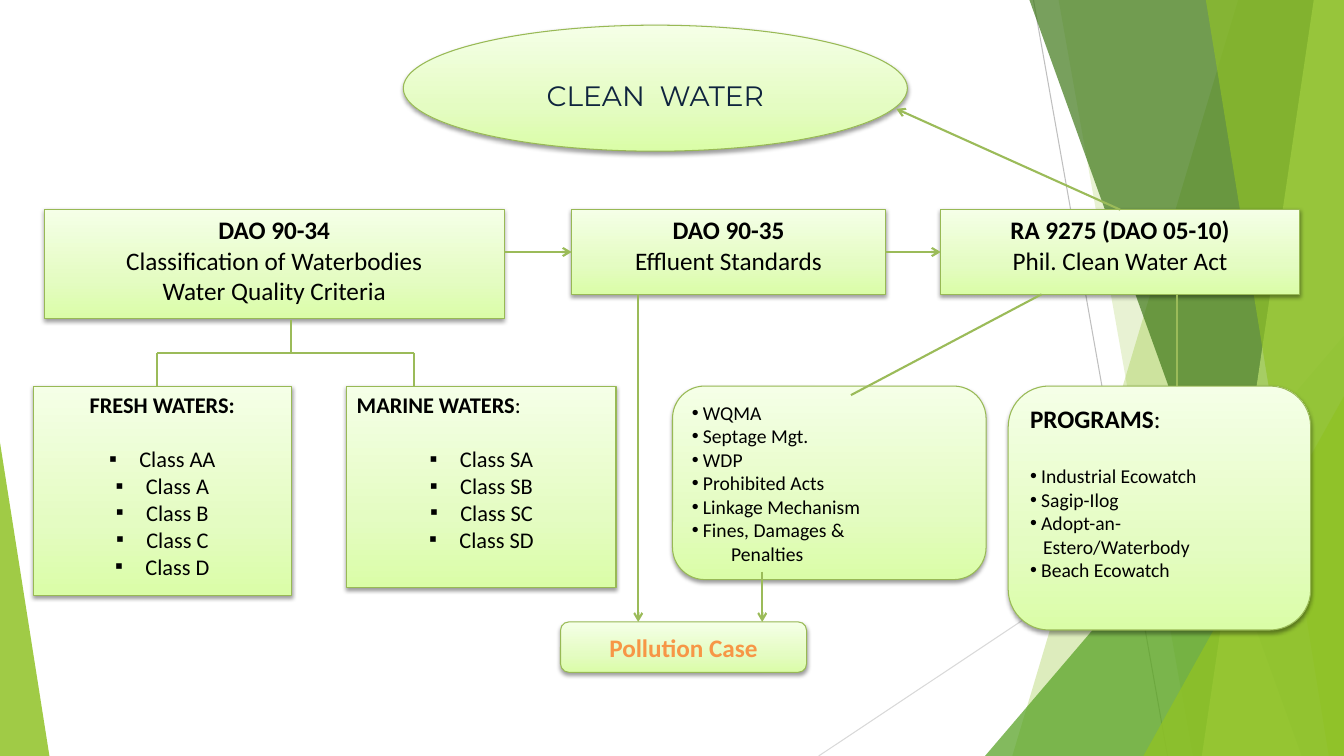
from lxml.etree import SubElement
from pptx import Presentation
from pptx.dml.color import RGBColor
from pptx.enum.shapes import MSO_CONNECTOR, MSO_SHAPE
from pptx.enum.text import MSO_ANCHOR, PP_ALIGN
from pptx.oxml.ns import qn
from pptx.util import Emu, Pt

PX = 9144  # EMU per px, 100 px to the inch
WIDTH, HEIGHT = 1333, 750

BLACK = RGBColor(0x00, 0x00, 0x00)
NAVY = RGBColor(0x0F, 0x24, 0x3E)
ORANGE = RGBColor(0xF7, 0x96, 0x46)
BORDER = RGBColor(0x98, 0xB9, 0x55)
LINK = RGBColor(0x9B, 0xBB, 0x59)
GREY = RGBColor(0xBF, 0xBF, 0xBF)
PALE_GREY = RGBColor(0xD9, 0xD9, 0xD9)
LIME = RGBColor(0x90, 0xC2, 0x26)
GREEN = RGBColor(0x54, 0xA0, 0x21)
DARK_GREEN = RGBColor(0x3F, 0x78, 0x19)
PALE_LIME = RGBColor(0xC0, 0xE4, 0x74)
BOX_STOPS = (
    (0, RGBColor(0xDA, 0xFD, 0xA7)),
    (35, RGBColor(0xE4, 0xFC, 0xC2)),
    (100, RGBColor(0xF5, 0xFF, 0xE7)),
)


def px(n):
    return Emu(n * PX)


def add(parent, tag, **attrs):
    """Append a drawing element such as a:ln to parent."""
    return SubElement(parent, qn(tag), {k: str(v) for k, v in attrs.items()})


class Diagram:
    """Holds the slide and the common style of its boxes, text and links."""

    def __init__(self, slide, font="Calibri"):
        self.shapes = slide.shapes
        self.font = font

    def facet(self, color, opacity, *points):
        fb = self.shapes.build_freeform(*points[0], scale=PX)
        fb.add_line_segments(points[1:], close=True)
        sp = fb.convert_to_shape()
        sp.shadow.inherit = False
        sp.fill.solid()
        sp.fill.fore_color.rgb = color
        sp.line.fill.background()
        clr = sp._element.spPr.find(qn("a:solidFill"))[0]
        add(clr, "a:alpha", val=opacity * 1000)

    def box(self, kind, x, y, w, h, anchor=MSO_ANCHOR.TOP):
        sp = self.shapes.add_shape(kind, px(x), px(y), px(w), px(h))
        sp.line.color.rgb = BORDER
        sp.line.width = Pt(0.75)
        sp.fill.gradient()
        sp.fill.gradient_angle = 90
        sp.shadow.inherit = False
        spPr = sp._element.spPr
        stops = spPr.find(qn("a:gradFill")).find(qn("a:gsLst"))
        for gs in list(stops):
            stops.remove(gs)
        for pos, color in BOX_STOPS:
            add(add(stops, "a:gs", pos=pos * 1000), "a:srgbClr", val=color)
        shadow = add(spPr.find(qn("a:effectLst")), "a:outerShdw", blurRad=Pt(3.1),
                     dist=Pt(1.6), dir=5400000, rotWithShape=0)
        add(add(shadow, "a:srgbClr", val=BLACK), "a:alpha", val=38000)
        tf = sp.text_frame
        tf.word_wrap = True
        tf.vertical_anchor = anchor
        return sp

    def para(self, sp, *runs, size=18, color=BLACK, align=PP_ALIGN.CENTER,
             before=0, left=0, bullet=None, font=None):
        """Add a paragraph of (text, bold) runs; a bullet hangs in the left indent."""
        tf = sp.text_frame
        p = tf.paragraphs[0]
        if p.runs:
            p = tf.add_paragraph()
        p.alignment = align
        p.space_before = Pt(before)
        pPr = p._p.get_or_add_pPr()
        pPr.set("marL", str(px(left)))
        pPr.set("indent", str(px(-left if bullet else 0)))
        if bullet:
            add(pPr, "a:buFont", typeface="Arial")
            add(pPr, "a:buChar", char=bullet)
        else:
            add(pPr, "a:buNone")
        for text, bold in runs:
            r = p.add_run()
            r.text = text
            r.font.name = font or self.font
            r.font.size = Pt(size)
            r.font.bold = bold
            r.font.color.rgb = color

    def bullets(self, sp, items, char, left, gap=0, **style):
        """Add a list, with gap points above its first item."""
        for i, item in enumerate(items):
            self.para(sp, (item, False), bullet=char, left=left,
                      before=0 if i else gap, **style)

    def link(self, x1, y1, x2, y2, color=LINK, width=1.5, arrow=False,
             begin=None, end=None):
        """Draw a line; begin and end are (shape, side) pairs to join."""
        cxn = self.shapes.add_connector(MSO_CONNECTOR.STRAIGHT,
                                        px(x1), px(y1), px(x2), px(y2))
        cxn.line.color.rgb = color
        cxn.line.width = Pt(width)
        if arrow:
            add(cxn.line._get_or_add_ln(), "a:tailEnd", type="arrow")
        add(cxn._element.spPr, "a:effectLst")
        if begin:
            cxn.begin_connect(*begin)
        if end:
            cxn.end_connect(*end)


def draw_backdrop(d):
    top, bottom = (WIDTH, 0), (WIDTH, HEIGHT)
    d.link(1025, 0, 1158, HEIGHT, GREY, 0.75)
    d.link(WIDTH, 403, 812, HEIGHT, PALE_GREY, 0.75)
    d.facet(LIME, 30, top, (1228, 0), (1004, HEIGHT), bottom)
    d.facet(LIME, 20, top, (1050, 0), (1183, HEIGHT), bottom)
    d.facet(GREEN, 72, (WIDTH, 333), (977, HEIGHT), bottom)
    d.facet(DARK_GREEN, 70, top, (1021, 0), (1291, HEIGHT), bottom)
    d.facet(PALE_LIME, 70, top, (1303, 0), (1192, HEIGHT), bottom)
    d.facet(LIME, 65, top, (1196, 0), (1318, HEIGHT), bottom)
    d.facet(LIME, 80, (WIDTH, 393), (1134, HEIGHT), bottom)
    d.facet(LIME, 85, (0, 439), (0, HEIGHT), (49, HEIGHT))


def draw_regulations(d):
    """Draw the title and the row of laws; return the two laws that links join."""
    title = d.box(MSO_SHAPE.OVAL, 400, 25, 500, 125, MSO_ANCHOR.MIDDLE)
    title.text_frame.margin_top = px(20)
    d.para(title, ("CLEAN  WATER", False), size=20, color=NAVY, font="Montserrat")

    laws = []
    for x, w, h, name, *details in (
        (44, 456, 108, "DAO 90-34", "Classification of Waterbodies", "Water Quality Criteria"),
        (567, 311, 84, "DAO 90-35", "Effluent Standards"),
        (933, 356, 84, "RA 9275 (DAO 05-10)", "Phil. Clean Water Act"),
    ):
        sp = d.box(MSO_SHAPE.RECTANGLE, x, 208, w, h)
        d.para(sp, (name, True))
        for detail in details:
            d.para(sp, (detail, False))
        laws.append(sp)
    return laws[1:]


def draw_details(d):
    fresh = d.box(MSO_SHAPE.RECTANGLE, 33, 383, 256, 208)
    d.para(fresh, ("FRESH WATERS:", True), size=16)
    marine = d.box(MSO_SHAPE.RECTANGLE, 344, 383, 267, 200)
    d.para(marine, ("MARINE WATERS", True), (":", False), size=16, align=PP_ALIGN.LEFT)
    for sp, classes in ((fresh, ("AA", "A", "B", "C", "D")),
                        (marine, ("SA", "SB", "SC", "SD"))):
        d.bullets(sp, [f"Class {c}" for c in classes], "▪", 30, gap=19.5, size=16)

    small = dict(size=14, align=PP_ALIGN.LEFT)
    programs = d.box(MSO_SHAPE.ROUNDED_RECTANGLE, 1000, 383, 300, 242)
    d.para(programs, ("PROGRAMS", True), (":", False), align=PP_ALIGN.LEFT)
    d.bullets(programs, ("Industrial Ecowatch", "Sagip-Ilog", "Adopt-an-"),
              "•", 11, gap=22, **small)
    d.para(programs, ("Estero/Waterbody", False), left=13, **small)
    d.bullets(programs, ("Beach Ecowatch",), "•", 11, **small)

    measures = d.box(MSO_SHAPE.ROUNDED_RECTANGLE, 667, 383, 311, 192)
    d.bullets(measures, ("WQMA", "Septage Mgt.", "WDP", "Prohibited Acts",
                         "Linkage Mechanism", "Fines, Damages &"), "•", 11, **small)
    d.para(measures, ("Penalties", False), left=39, **small)

    case = d.box(MSO_SHAPE.ROUNDED_RECTANGLE, 556, 617, 244, 50, MSO_ANCHOR.MIDDLE)
    d.para(case, ("Pollution Case", True), color=ORANGE)


def draw_links(d, effluent, water_act):
    d.link(500, 250, 567, 250, arrow=True, end=(effluent, 1))
    d.link(878, 250, 933, 250, arrow=True, begin=(effluent, 3), end=(water_act, 1))
    d.link(1111, 208, 889, 108, arrow=True, begin=(water_act, 0))
    d.link(1167, 292, 1167, 383)
    d.link(1033, 292, 844, 392)
    for x, y in ((633, 292), (756, 567)):
        d.link(x, y, x, 617, arrow=True)
    d.link(289, 317, 289, 350)
    d.link(156, 350, 411, 350)
    for x in (156, 411):
        d.link(x, 350, x, 383)


def main():
    prs = Presentation()
    prs.slide_width, prs.slide_height = px(WIDTH), px(HEIGHT)
    d = Diagram(prs.slides.add_slide(prs.slide_layouts[6]))
    draw_backdrop(d)
    effluent, water_act = draw_regulations(d)
    draw_details(d)
    draw_links(d, effluent, water_act)
    prs.save("out.pptx")


if __name__ == "__main__":
    main()
